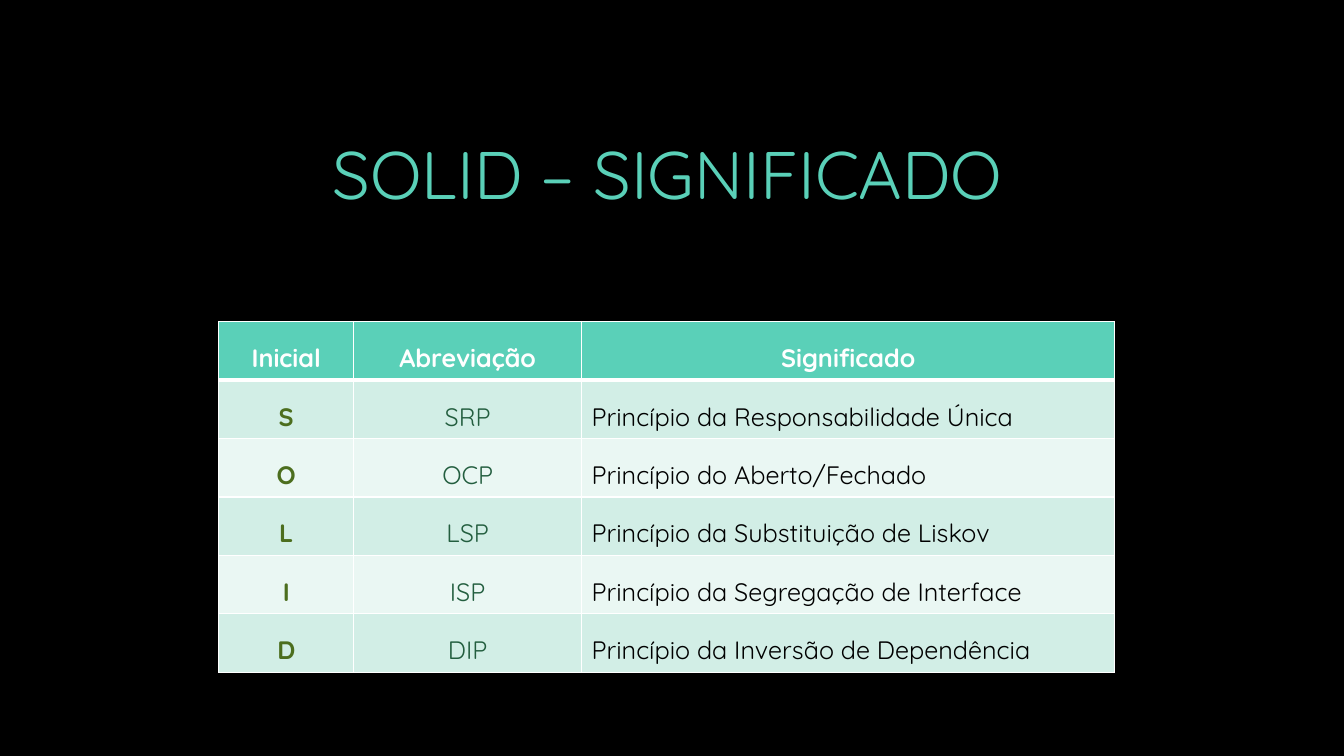
"""Build the slide that lists what each SOLID letter stands for."""
from dataclasses import dataclass

from lxml.etree import SubElement as Sub
from pptx import Presentation as Deck
from pptx.dml.color import RGBColor as Rgb
from pptx.enum.text import MSO_ANCHOR as Anchor, PP_ALIGN as Align
from pptx.oxml.ns import qn
from pptx.util import Pt

FONT = "Quicksand"
HUES = {
    "back": "000000",
    "mint": "5AD0B8",
    "line": "FFFFFF",
    "odd": "D2EEE6",
    "even": "EAF7F3",
    "moss": "4C6E1E",
    "pine": "235E3F",
    "ink": "000000",
}


@dataclass
class Style:
    size: float
    hue: str
    bold: bool = False
    align: Align = Align.CENTER
    space: float = 1.0


@dataclass
class Column:
    head: str
    width: float
    style: Style
    items: list[str]


HEAD = Style(18, "line", True, space=1.5)
COLS = [
    Column("Inicial", 96.48, Style(18, "moss", True, space=1.5), list("SOLID")),
    Column("Abreviação", 162.72, Style(18, "pine", space=1.5),
           ["SRP", "OCP", "LSP", "ISP", "DIP"]),
    Column("Significado", 380.88, Style(18, "ink", align=Align.LEFT, space=1.5),
           ["Princípio da Responsabilidade Única",
            "Princípio do Aberto/Fechado",
            "Princípio da Substituição de Liskov",
            "Princípio da Segregação de Interface",
            "Princípio da Inversão de Dependência"]),
]
ROW = 41.76


def color(name: str) -> Rgb:
    return Rgb.from_string(HUES[name])


def write(frame, text: str, style: Style) -> None:
    frame.text = text
    para = frame.paragraphs[0]
    para.alignment = style.align
    para.line_spacing = style.space
    for run in para.runs:
        run.font.name = FONT
        run.font.size = Pt(style.size)
        run.font.bold = style.bold
        run.font.color.rgb = color(style.hue)


def border(cell, row: int) -> None:
    props = cell._tc.get_or_add_tcPr()
    widths = {"L": 1, "R": 1, "T": 3 if row == 1 else 1, "B": 3 if row == 0 else 1}
    for side, width in widths.items():
        line = Sub(props, qn(f"a:ln{side}"), w=str(Pt(width)))
        fill = Sub(line, qn("a:solidFill"))
        Sub(fill, qn("a:srgbClr"), val=HUES["line"])


def paint(cell, row: int, text: str, style: Style) -> None:
    border(cell, row)
    cell.fill.solid()
    cell.fill.fore_color.rgb = color("mint" if row == 0 else "odd" if row % 2 else "even")
    write(cell.text_frame, text, style)


def title(slide) -> None:
    box = slide.shapes.add_textbox(Pt(43.92), Pt(48.24), Pt(865.44), Pt(149.76))
    frame = box.text_frame
    frame.word_wrap = True
    frame.vertical_anchor = Anchor.MIDDLE
    write(frame, "SOLID – SIGNIFICADO", Style(48, "mint"))


def grid(slide) -> None:
    count = len(COLS[0].items) + 1
    width = sum(col.width for col in COLS)
    table = slide.shapes.add_table(
        count, len(COLS), Pt(156.24), Pt(229.68), Pt(width), Pt(ROW * count)).table
    for line in table.rows:
        line.height = Pt(ROW)
    for place, col in enumerate(COLS):
        table.columns[place].width = Pt(col.width)
        paint(table.cell(0, place), 0, col.head, HEAD)
        for row, item in enumerate(col.items, 1):
            paint(table.cell(row, place), row, item, col.style)


def main() -> None:
    deck = Deck()
    deck.slide_width, deck.slide_height = Pt(960), Pt(540)
    slide = deck.slides.add_slide(deck.slide_layouts[6])
    slide.background.fill.solid()
    slide.background.fill.fore_color.rgb = color("back")
    title(slide)
    grid(slide)
    deck.save("out.pptx")


if __name__ == "__main__":
    main()
